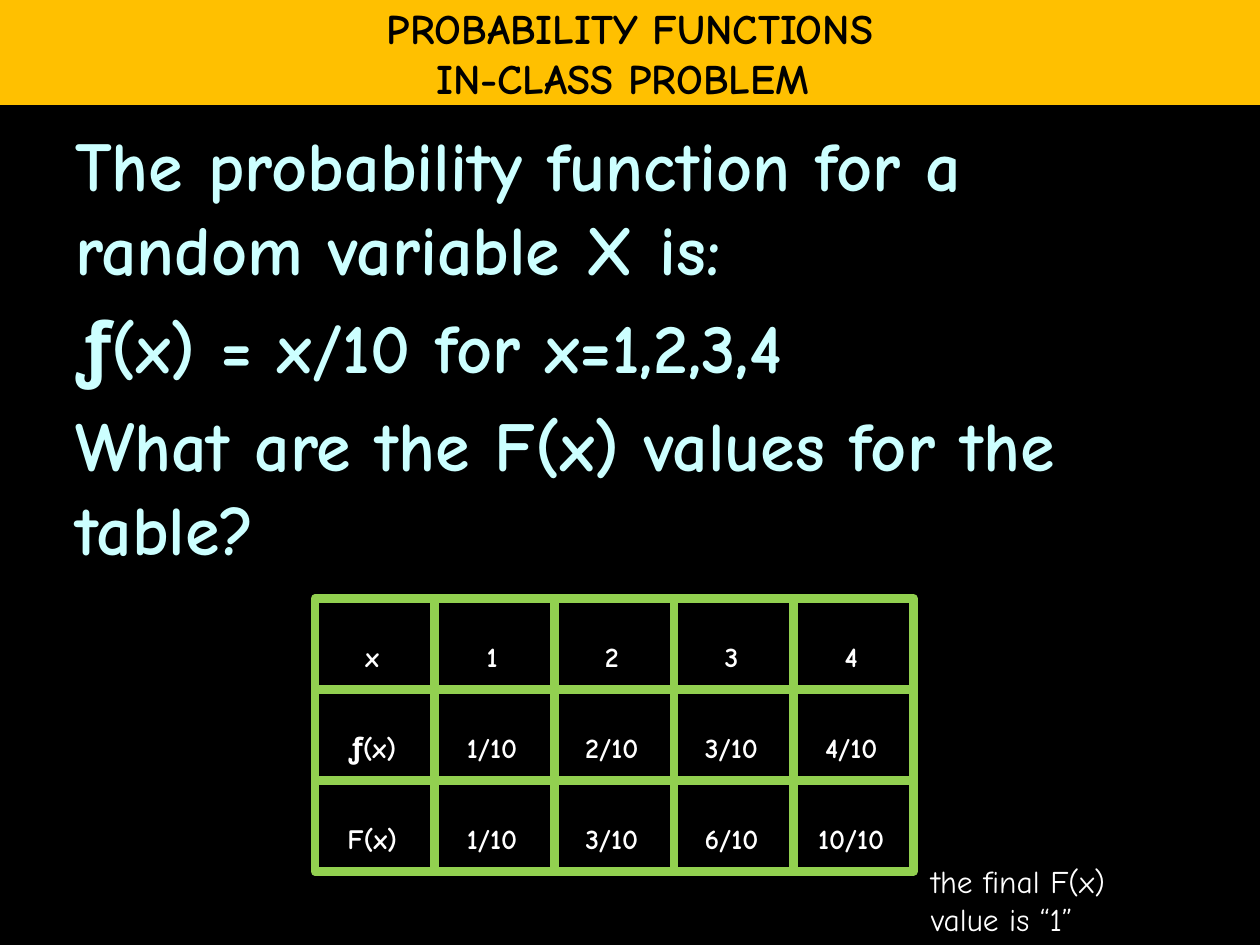
from pptx import Presentation
from pptx.dml.color import RGBColor
from pptx.enum.shapes import MSO_SHAPE
from pptx.enum.text import MSO_ANCHOR, PP_ALIGN
from pptx.util import Pt


def color(value):
    return RGBColor.from_string(value)


def write(tf, lines, size, font_color, bold=True, align=PP_ALIGN.LEFT):
    tf.text = "\n".join(lines)
    for p in tf.paragraphs:
        p.alignment = align
        for r in p.runs:
            r.font.name = "Comic Neue"
            r.font.size = Pt(size)
            r.font.bold = bold
            r.font.color.rgb = color(font_color)


prs = Presentation()
prs.slide_width, prs.slide_height = Pt(720), Pt(540)
s = prs.slides.add_slide(prs.slide_layouts[6])
s.background.fill.solid()
s.background.fill.fore_color.rgb = color("000000")

# Problem statement
tf = s.shapes.add_textbox(Pt(36), Pt(66), Pt(648), Pt(444)).text_frame
tf.word_wrap = True
write(tf, ["The probability function for a random variable X is:",
           "ƒ(x) = x/10 for x=1,2,3,4",
           "What are the F(x) values for the table?"], 40, "CCFFFF")
for p in tf.paragraphs:
    p.space_before = Pt(8)

# Grid of outlined boxes with the function values
rows = [
    ["x", "1", "2", "3", "4"],
    ["ƒ(x)", "1/10", "2/10", "3/10", "4/10"],
    ["F(x)", "1/10", "3/10", "6/10", "10/10"],
]
left, top, width, height = 180, 342, 68.4, 52
for i, row in enumerate(rows):
    for j, value in enumerate(row):
        sp = s.shapes.add_shape(MSO_SHAPE.RECTANGLE, Pt(left + j * width),
                                Pt(top + i * height), Pt(width), Pt(height))
        sp.shadow.inherit = False
        sp.fill.background()
        sp.line.color.rgb = color("92D050")
        sp.line.width = Pt(5)
        tf = sp.text_frame
        tf.word_wrap = True
        tf.vertical_anchor = MSO_ANCHOR.TOP
        tf.margin_left, tf.margin_top = Pt(0.72), Pt(3.6)
        tf.margin_right, tf.margin_bottom = Pt(3.6), Pt(14.4)
        write(tf, [value], 16, "FFFFFF", align=PP_ALIGN.CENTER)
        tf.paragraphs[0].line_spacing = Pt(39)

# Title band
sp = s.shapes.add_shape(MSO_SHAPE.RECTANGLE, Pt(0), Pt(0), Pt(720), Pt(60))
sp.shadow.inherit = False
sp.fill.solid()
sp.fill.fore_color.rgb = color("FFC000")
sp.line.fill.background()
tf = sp.text_frame
tf.word_wrap = False
tf.vertical_anchor = MSO_ANCHOR.MIDDLE
write(tf, ["PROBABILITY FUNCTIONS", "IN-CLASS PROBLEM "], 24, "000000",
      align=PP_ALIGN.CENTER)

# Note beside the last value
tf = s.shapes.add_textbox(Pt(525), Pt(489), Pt(129), Pt(51)).text_frame
tf.word_wrap = True
write(tf, ["the final F(x) value is “1”"], 18, "FFFFFF", bold=False)

prs.save("out.pptx")
